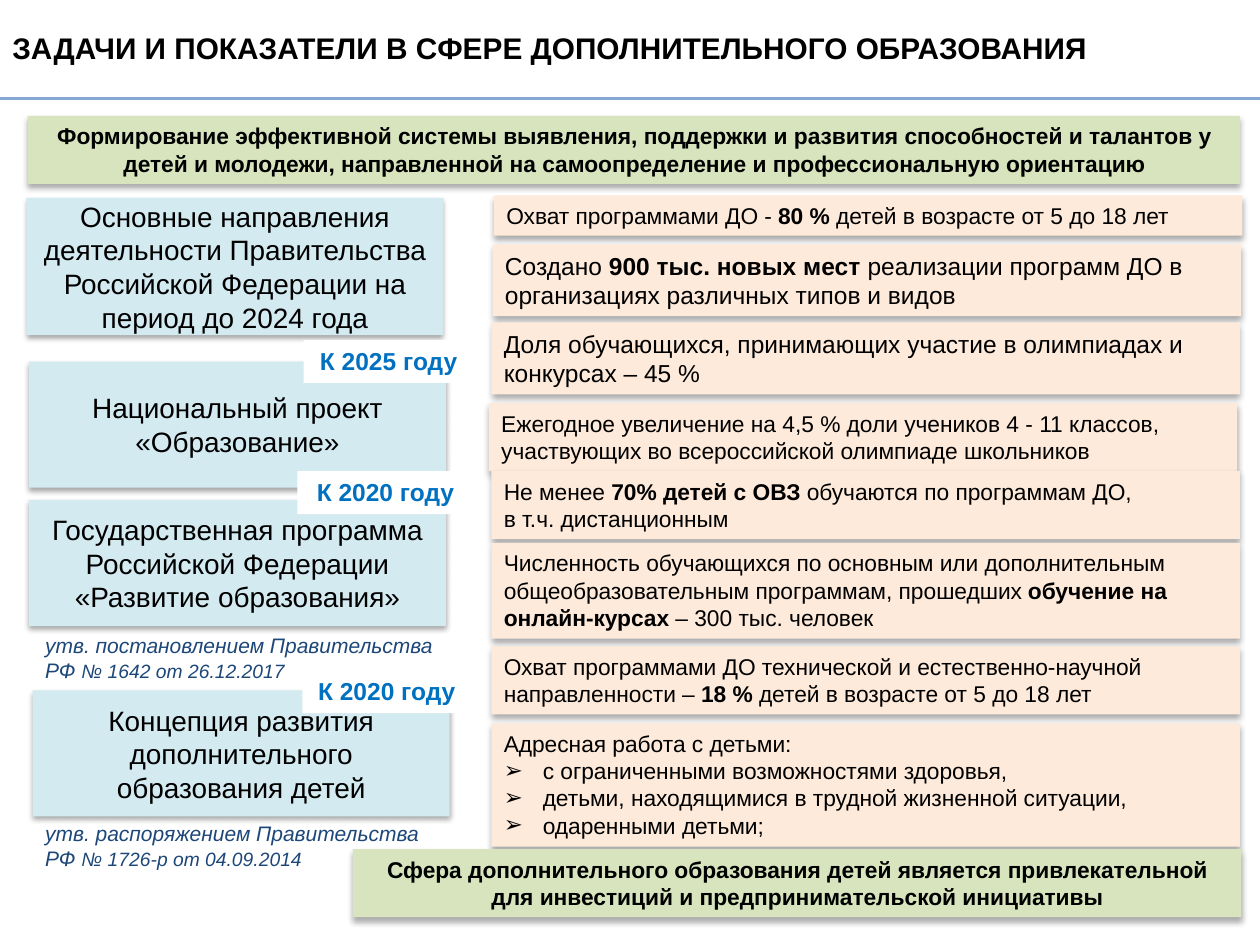
import pptx
import pptx.util
import pptx.dml.color
import pptx.enum.shapes
import pptx.enum.text
import pptx.oxml
import pptx.oxml.ns
import lxml.etree

Inches = pptx.util.Inches
Pt = pptx.util.Pt
ALIGN = pptx.enum.text.PP_ALIGN
ANCHOR = pptx.enum.text.MSO_ANCHOR

BLACK, WHITE = "000000", "FFFFFF"
GREEN, BLUE, PEACH = "D7E4BD", "D3EAF1", "FDEADA"
NAVY, ACCENT, RULE = "1D4779", "0070C0", "85A7D1"
# opacity in percent, blur and distance in points
SOFT_SHADOW = (32, 3.5, 2.2)
CARD_SHADOW = (35, 3.1, 1.8)
BULLET = "➢"

# left offset, top offset, height, text size, lines; *...* marks bold
INDICATORS = [
    (0.04, 0, 0.32, 13, ["Охват программами ДО - *80 %* детей в возрасте от 5 до 18 лет"]),
    (0.03, 0.39, 0.57, 14, ["Создано *900 тыс. новых мест *реализации программ ДО в "
                            "организациях различных типов и видов"]),
    (0.02, 1.01, 0.57, 14, ["Доля обучающихся, принимающих участие в олимпиадах и конкурсах – 45 %"]),
    (0, 1.65, 0.54, 13, ["Ежегодное увеличение на 4,5 % доли учеников 4 - 11 классов, "
                         "участвующих во всероссийской олимпиаде школьников"]),
    (0.02, 2.19, 0.54, 13, ["Не менее *70% детей с ОВЗ *обучаются по программам ДО,",
                            "в т.ч. дистанционным"]),
    (0.02, 2.76, 0.76, 13, ["Численность обучающихся по основным или дополнительным "
                            "общеобразовательным программам, прошедших "
                            "*обучение на онлайн-курсах* – 300 тыс. человек"]),
    (0.02, 3.58, 0.54, 13, ["Охват программами ДО технической и естественно-научной "
                            "направленности – *18 % *детей в возрасте от 5 до 18 лет"]),
    (0.02, 4.19, 0.98, 13, ["Адресная работа с детьми:",
                            BULLET + "с ограниченными возможностями здоровья,",
                            BULLET + "детьми, находящимися в трудной жизненной ситуации,",
                            BULLET + "одаренными детьми;"]),
]
# left offset, top offset, height, text
DOCUMENTS = [
    (0, 0, 1.09, "Основные направления деятельности Правительства Российской Федерации "
                 "на период до 2024 года"),
    (0.02, 1.3, 1, "Национальный проект «Образование»"),
    (0.02, 2.4, 1, "Государственная программа Российской Федерации «Развитие образования»"),
    (0.05, 3.91, 1, "Концепция развития дополнительного образования детей"),
]
# top offset, approving act, its number
APPROVALS = [
    (3.4, "утв. постановлением Правительства РФ ", "№ 1642 от 26.12.2017"),
    (4.89, "утв. распоряжением Правительства РФ ", "№ 1726-р от 04.09.2014"),
]
# left offset, top offset, width, text
DEADLINES = [
    (2.2, 1.13, 1.35, "К 2025 году"),
    (2.15, 2.17, 1.4, "К 2020 году"),
    (2.19, 3.75, 1.34, "К 2020 году"),
]


def color(value):
    return pptx.dml.color.RGBColor.from_string(value)


def add_shadow(shape, opacity, blur, distance):
    effects = shape._element.spPr.find(pptx.oxml.ns.qn("a:effectLst"))
    shadow = lxml.etree.SubElement(
        effects, pptx.oxml.ns.qn("a:outerShdw"), blurRad=str(Pt(blur)),
        dist=str(Pt(distance)), dir="5400000", rotWithShape="0")
    tint = lxml.etree.SubElement(shadow, pptx.oxml.ns.qn("a:srgbClr"), val=BLACK)
    lxml.etree.SubElement(tint, pptx.oxml.ns.qn("a:alpha"), val=str(opacity * 1000))


def add_bullet(para):
    properties = para._p.get_or_add_pPr()
    properties.set("marL", str(Inches(0.31)))
    properties.set("indent", str(Inches(-0.31)))
    lxml.etree.SubElement(properties, pptx.oxml.ns.qn("a:buFont"), typeface="Arial")
    lxml.etree.SubElement(properties, pptx.oxml.ns.qn("a:buChar"), char=BULLET)


def style(span, size, tone=BLACK, bold=False, italic=False):
    span.font.name = "Arial"
    span.font.size = Pt(size)
    span.font.color.rgb = color(tone)
    span.font.bold = bold
    span.font.italic = italic


def write(shape, lines, size, tone=BLACK, align=ALIGN.LEFT, anchor=ANCHOR.TOP):
    """Fill a shape with lines; *...* makes bold, a leading bullet sign makes a list item."""
    frame = shape.text_frame
    frame.word_wrap = True
    frame.vertical_anchor = anchor
    for index, line in enumerate(lines):
        para = frame.add_paragraph() if index else frame.paragraphs[0]
        para.alignment = align
        if line.startswith(BULLET):
            add_bullet(para)
        for part, text in enumerate(line.removeprefix(BULLET).split("*")):
            if text:
                span = para.add_run()
                span.text = text
                style(span, size, tone, bold=part % 2 == 1)


def add_panel(page, left, top, width, height, fill, shadow=None):
    panel = page.shapes.add_shape(
        pptx.enum.shapes.MSO_SHAPE.RECTANGLE,
        Inches(left), Inches(top), Inches(width), Inches(height))
    panel.fill.solid()
    panel.fill.fore_color.rgb = color(fill)
    panel.line.fill.background()
    panel.shadow.inherit = False
    if shadow:
        add_shadow(panel, *shadow)
    return panel


def add_heading(page, left, top, width):
    box = page.shapes.add_textbox(Inches(left), Inches(top), Inches(8.83), Inches(0.39))
    write(box, ["*ЗАДАЧИ И ПОКАЗАТЕЛИ В СФЕРЕ ДОПОЛНИТЕЛЬНОГО ОБРАЗОВАНИЯ*"], 17)
    y = Inches(top + 0.59)
    rule = page.shapes.add_connector(
        pptx.enum.shapes.MSO_CONNECTOR.STRAIGHT, Inches(left), y, Inches(left + width), y)
    rule.line.color.rgb = color(RULE)
    rule.line.width = Pt(1.5)
    lxml.etree.SubElement(rule._element.spPr, pptx.oxml.ns.qn("a:effectLst"))


def add_banner(page, left, top, width, text):
    banner = add_panel(page, left, top, width, 0.54, GREEN, SOFT_SHADOW)
    write(banner, [f"*{text}*"], 13, align=ALIGN.CENTER)


def add_approval(page, left, top, act, number):
    box = page.shapes.add_textbox(Inches(left), Inches(top), Inches(3.39), Inches(0.5))
    box.text_frame.word_wrap = True
    para = box.text_frame.paragraphs[0]
    for text, size in ((act, 12), (number, 11)):
        span = para.add_run()
        span.text = text
        style(span, size, NAVY, italic=True)


def add_documents(page, left, top, width):
    for shift, offset, height, text in DOCUMENTS:
        card = add_panel(page, left + shift, top + offset, width, height, BLUE, CARD_SHADOW)
        write(card, [text], 16, align=ALIGN.CENTER, anchor=ANCHOR.MIDDLE)
    for offset, act, number in APPROVALS:
        add_approval(page, left + 0.05, top + offset, act, number)
    for shift, offset, label_width, text in DEADLINES:
        label = add_panel(page, left + shift, top + offset, label_width, 0.34, WHITE)
        write(label, [f"*{text}*"], 14, ACCENT, ALIGN.CENTER)


def add_indicators(page, left, top, width):
    for shift, offset, height, size, lines in INDICATORS:
        panel = add_panel(page, left + shift, top + offset, width, height, PEACH, SOFT_SHADOW)
        write(panel, lines, size)


def main():
    deck = pptx.Presentation()
    deck.slide_width, deck.slide_height = Inches(10), Inches(7.5)
    page = deck.slides.add_slide(deck.slide_layouts[6])
    add_heading(page, 0, 0.19, 10)
    add_banner(page, 0.22, 0.92, 9.62,
               "Формирование эффективной системы выявления, поддержки и развития "
               "способностей и талантов у детей и молодежи, направленной на "
               "самоопределение и профессиональную ориентацию")
    add_indicators(page, 3.88, 1.55, 5.94)
    add_documents(page, 0.21, 1.57, 3.31)
    add_banner(page, 2.8, 6.74, 7.05,
               "Сфера дополнительного образования детей является привлекательной "
               "для инвестиций и предпринимательской инициативы")
    deck.save("out.pptx")


if __name__ == "__main__":
    main()
